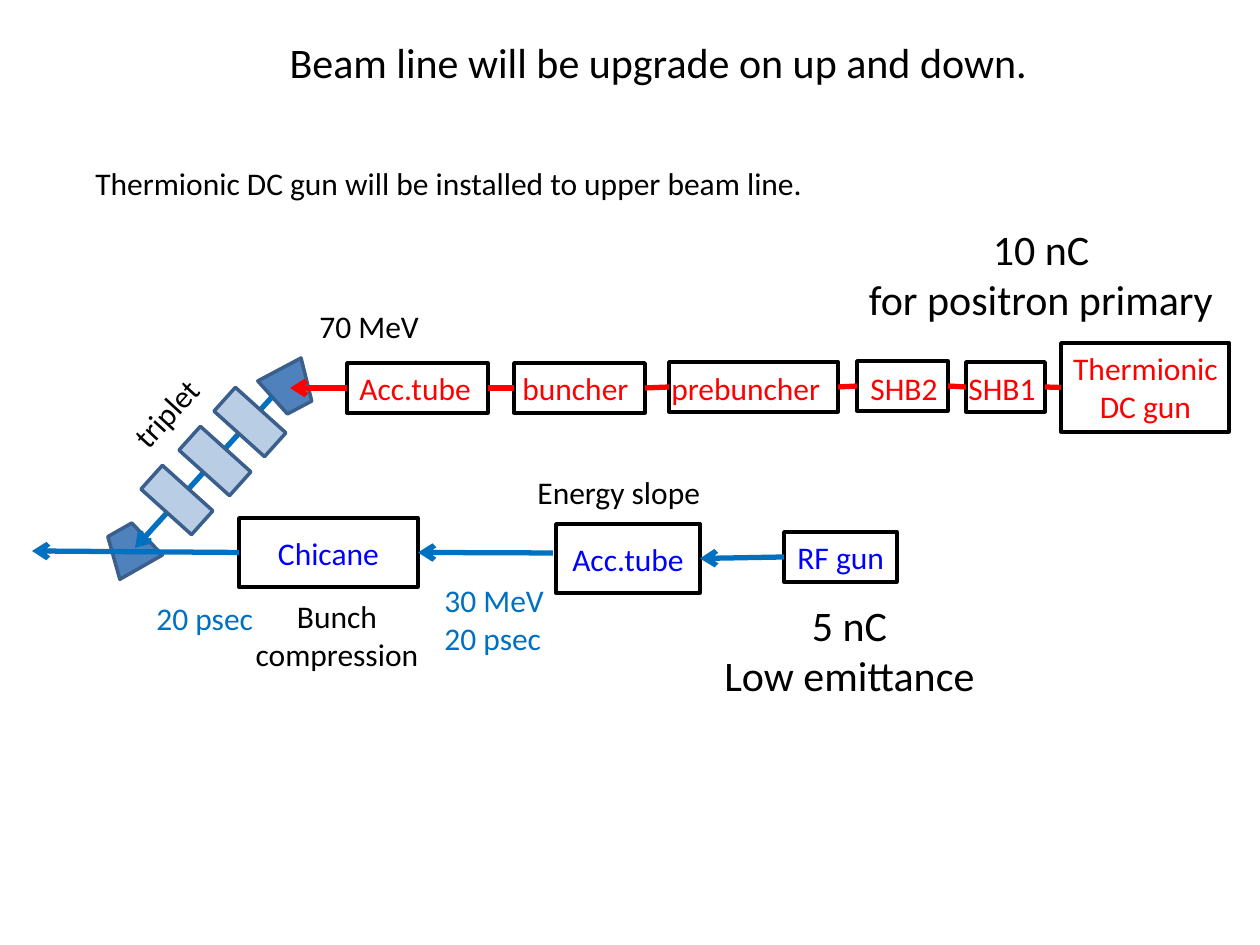
from lxml import etree
from pptx import Presentation
from pptx.dml.color import RGBColor
from pptx.enum.shapes import MSO_CONNECTOR, MSO_SHAPE
from pptx.enum.text import MSO_ANCHOR, PP_ALIGN
from pptx.oxml.ns import qn
from pptx.util import Emu, Pt

PX = 914400 / 126
TOP, LEFT, BOTTOM, RIGHT = range(4)
COLORS = {
    "black": "000000", "white": "FFFFFF", "red": "FF0000", "blue": "0000FF",
    "beam": "0070C0", "bend": "4F81BD", "magnet": "B9CDE5", "edge": "3A5F8C",
}

# label, text box (left, top, width, height), frame (left, top, width, height)
THERMIONIC_LINE = [
    ("Acc.tube", (347, 363, 159, 50), (347, 363, 141, 50)),
    ("buncher", (510, 363, 154, 50), (514, 363, 131, 50)),
    ("prebuncher", (659, 363, 203, 50), (669, 362, 169, 50)),
    ("SHB2", (858, 363, 110, 50), (857, 361, 91, 50)),
    ("SHB1", (956, 363, 110, 50), (966, 362, 79, 50)),
    ("Thermionic DC gun", (1051, 343, 189, 89), (1061, 343, 168, 89)),
]
RF_GUN = ("RF gun", (785, 532, 139, 50), (784, 532, 113, 50))

# lines of text, box, format
NOTES = [
    (["Thermionic DC gun will be installed to upper beam line."], (83, 158, 1121, 50), {}),
    (["10 nC", "for positron primary"], (842, 217, 398, 115), {"size": 24, "centred": True}),
    (["70 MeV"], (307, 301, 147, 50), {}),
    (["triplet"], (107, 372, 146, 50), {"rotation": 312.5}),
    (["Energy slope"], (525, 467, 194, 50), {}),
    (["30 MeV", "20 psec"], (432, 575, 139, 89), {"color": "beam"}),
    (["Bunch compression"], (238, 591, 198, 89), {"centred": True}),
    (["20 psec"], (144, 593, 123, 50), {"color": "beam", "wrap": False}),
    (["5 nC", "Low emittance"], (704, 593, 291, 115), {"size": 24, "centred": True}),
]


def px(*lengths):
    return [Emu(round(length * PX)) for length in lengths]


def rgb(name):
    return RGBColor.from_string(COLORS[name])


def write(shape, lines, color="black", size=18, centred=False, wrap=True, anchor=MSO_ANCHOR.TOP):
    frame = shape.text_frame
    frame.word_wrap = wrap
    frame.vertical_anchor = anchor
    frame.text = "\n".join(lines)
    for para in frame.paragraphs:
        para.alignment = PP_ALIGN.CENTER if centred else PP_ALIGN.LEFT
        for name, value in {"name": "Calibri", "size": Pt(size)}.items():
            setattr(para.runs[0].font, name, value)
        para.runs[0].font.color.rgb = rgb(color)


def add_title(page, text, place):
    title = page.shapes.title
    title.left, title.top, title.width, title.height = px(*place)
    write(title, [text], size=24, wrap=False)


def add_text(page, lines, place, rotation=0, **style):
    box = page.shapes.add_textbox(*px(*place))
    box.rotation = rotation
    write(box, lines, **style)


def add_block(page, place, fill=None, line="black", rotation=0, kind=MSO_SHAPE.RECTANGLE):
    block = page.shapes.add_shape(kind, *px(*place))
    block.shadow.inherit = False
    block.rotation = rotation
    if fill:
        block.fill.solid()
        block.fill.fore_color.rgb = rgb(fill)
    else:
        block.fill.background()
    block.line.color.rgb = rgb(line)
    block.line.width = Pt(2)
    return block


def add_device(page, label, place):
    device = add_block(page, place, fill="white")
    write(device, [label], color="blue", centred=True, anchor=MSO_ANCHOR.MIDDLE)
    return device


def add_beam(page, start, end, color="beam", arrow=True):
    """Draw a beam; each end is an (x, y) point or a (block, side) pair."""
    points = [(0, 0) if hasattr(stop[0], "shape_id") else stop for stop in (start, end)]
    beam = page.shapes.add_connector(MSO_CONNECTOR.STRAIGHT, *px(*points[0], *points[1]))
    for stop, join in ((start, beam.begin_connect), (end, beam.end_connect)):
        if hasattr(stop[0], "shape_id"):
            join(*stop)
    beam.line.color.rgb = rgb(color)
    beam.line.width = Pt(3)
    if arrow:
        etree.SubElement(beam.line._get_or_add_ln(), qn("a:tailEnd"), type="arrow")
    etree.SubElement(beam._element.spPr, qn("a:effectLst"))


def add_bends_and_triplet(page):
    for left, top, rotation in ((265, 367, 152.1), (106, 527, 330.3)):
        add_block(page, (left, top, 49, 43), "bend", "edge", rotation, MSO_SHAPE.TRAPEZOID)
    add_beam(page, (272, 397), (135, 548))
    for number, left in enumerate((234, 199, 161)):
        add_block(page, (left, 388 + 39 * number, 32, 68), "magnet", "edge", 312)


def add_thermionic_line(page):
    for label, place, _ in THERMIONIC_LINE:
        add_text(page, [label], place, color="red", centred=label.endswith("gun"))
    frames = [add_block(page, place) for _, _, place in THERMIONIC_LINE]
    add_beam(page, (frames[0], LEFT), (290, 388), "red")
    for left_frame, right_frame in zip(frames, frames[1:]):
        add_beam(page, (right_frame, LEFT), (left_frame, RIGHT), "red", arrow=False)


def add_rf_line(page):
    label, text_place, frame_place = RF_GUN
    add_text(page, [label], text_place, color="blue")
    gun = add_block(page, frame_place)
    tube = add_device(page, "Acc.tube", (556, 524, 144, 69))
    chicane = add_device(page, "Chicane", (239, 518, 179, 69))
    add_beam(page, (gun, LEFT), (tube, RIGHT))
    add_beam(page, (553, 553), (chicane, RIGHT))
    add_beam(page, (chicane, LEFT), (32, 551))


def main():
    deck = Presentation()
    deck.slide_width, deck.slide_height = px(1260, 945)
    page = deck.slides.add_slide(deck.slide_layouts[5])
    add_title(page, "Beam line will be upgrade on up and down.", (277, 30, 770, 63))
    add_bends_and_triplet(page)
    add_thermionic_line(page)
    add_rf_line(page)
    for lines, place, style in NOTES:
        add_text(page, lines, place, **style)
    deck.save("out.pptx")


if __name__ == "__main__":
    main()
